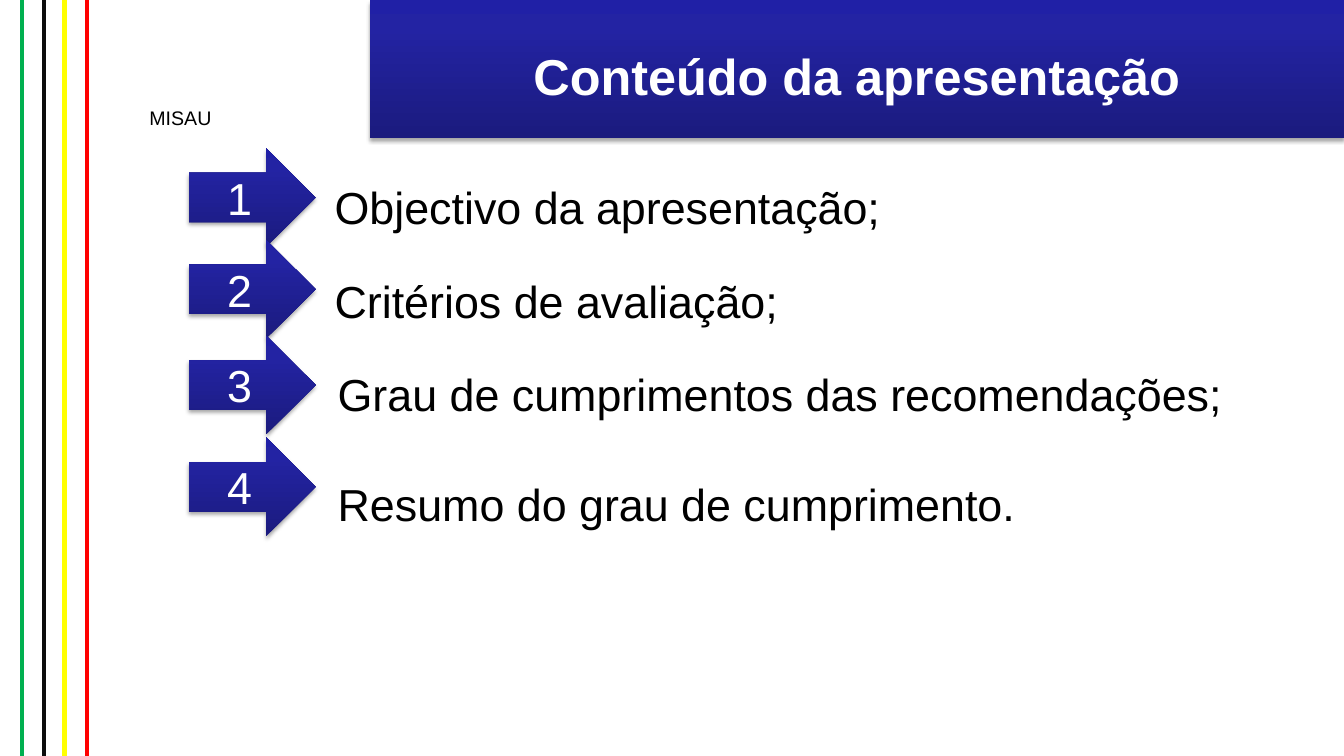
from dataclasses import dataclass

import pptx
import pptx.dml.color
import pptx.enum.shapes
import pptx.enum.text
import pptx.oxml
import pptx.oxml.ns
import pptx.util
from pptx.util import Inches

FONT = "Arial"
WHITE, BLACK = "FFFFFF", "000000"
SHAPES = pptx.enum.shapes.MSO_SHAPE
ALIGN = pptx.enum.text.PP_ALIGN
ANCHOR = pptx.enum.text.MSO_ANCHOR
GRADIENT = ((0, "1B1B7E"), (80, "2323A3"), (100, "2020A6"))
NAMESPACE = pptx.oxml.ns.nsdecls("a")


@dataclass
class Stripe:
    left: float
    color: str


@dataclass
class Topic:
    arrow_top: float
    text: str
    indent: float
    space_after: int


STRIPES = [
    Stripe(0.22, "00B050"),
    Stripe(0.44, "0D0D0D"),
    Stripe(0.64, "FFFF00"),
    Stripe(0.86, "FF0000"),
]
TOPICS = [
    Topic(1.47, "Objectivo da apresentação;", 0.44, 0),
    Topic(2.38, "Critérios de avaliação;", 0.44, 0),
    Topic(3.33, "Grau de cumprimentos das recomendações;", 0.47, 12),
    Topic(4.34, "Resumo do grau de cumprimento.", 0.47, 12),
]


def rgb(color: str) -> pptx.dml.color.RGBColor:
    return pptx.dml.color.RGBColor.from_string(color)


def style_paragraph(para, size: int, color: str, align, bold: bool = False) -> None:
    para.alignment = align
    para.font.name = FONT
    para.font.size = pptx.util.Pt(size)
    para.font.bold = bold
    para.font.color.rgb = rgb(color)


def add_stripe(page, stripe: Stripe) -> None:
    line = page.shapes.add_connector(
        pptx.enum.shapes.MSO_CONNECTOR.STRAIGHT,
        Inches(stripe.left), 0, Inches(stripe.left), Inches(7.5))
    line.line.color.rgb = rgb(stripe.color)
    line.line.width = pptx.util.Pt(3)
    line._element.spPr.append(pptx.oxml.parse_xml(f"<a:effectLst {NAMESPACE}/>"))


def add_blue_shape(page, kind, left: float, top: float, width: float, height: float,
                   text: str, size: int, bold: bool = False):
    shape = page.shapes.add_shape(
        kind, Inches(left), Inches(top), Inches(width), Inches(height))
    shape.line.fill.background()
    # Gradient from bottom to top
    stops = "".join(
        f'<a:gs pos="{place * 1000}"><a:srgbClr val="{color}"/></a:gs>'
        for place, color in GRADIENT)
    properties = shape._element.spPr
    properties.find(pptx.oxml.ns.qn("a:prstGeom")).addnext(pptx.oxml.parse_xml(
        f'<a:gradFill {NAMESPACE} rotWithShape="1"><a:gsLst>{stops}</a:gsLst>'
        '<a:lin ang="16200000" scaled="0"/></a:gradFill>'))
    # Soft shadow below
    properties.append(pptx.oxml.parse_xml(
        f'<a:effectLst {NAMESPACE}><a:outerShdw blurRad="39370" dist="22860" '
        'dir="5400000" rotWithShape="0"><a:srgbClr val="000000">'
        '<a:alpha val="35000"/></a:srgbClr></a:outerShdw></a:effectLst>'))
    frame = shape.text_frame
    frame.vertical_anchor = ANCHOR.MIDDLE
    frame.text = text
    style_paragraph(frame.paragraphs[0], size, WHITE, ALIGN.CENTER, bold)
    return shape


def add_text_box(page, left: float, top: float, width: float, height: float):
    box = page.shapes.add_textbox(
        Inches(left), Inches(top), Inches(width), Inches(height))
    box.text_frame.word_wrap = True
    return box.text_frame


def add_topics(page) -> None:
    frame = add_text_box(page, 2.78, 1.47, 10.39, 4.57)
    for index, topic in enumerate(TOPICS):
        para = frame.paragraphs[0] if index == 0 else frame.add_paragraph()
        para.text = topic.text
        para._p.get_or_add_pPr().set("marL", str(Inches(topic.indent)))
        para.line_spacing = 1.5
        if index:
            para.space_before = pptx.util.Pt(9)
        para.space_after = pptx.util.Pt(topic.space_after)
        style_paragraph(para, 32, BLACK, ALIGN.JUSTIFY)


def main() -> None:
    deck = pptx.Presentation()
    deck.slide_width, deck.slide_height = Inches(13.33), Inches(7.5)
    page = deck.slides.add_slide(deck.slide_layouts[6])

    # Flag stripes and ministry label
    for stripe in STRIPES:
        add_stripe(page, stripe)
    label = add_text_box(page, 1.07, 1, 1.44, 0.34)
    label.text = "MISAU"
    style_paragraph(label.paragraphs[0], 14, BLACK, ALIGN.CENTER)

    # Title banner
    banner = add_blue_shape(page, SHAPES.RECTANGLE, 3.67, 0, 9.66, 1.37,
                            "Conteúdo da apresentação", 36, bold=True)
    banner.text_frame.margin_top = Inches(0.17)

    # Topics and their numbered arrows
    add_topics(page)
    for number, topic in enumerate(TOPICS, start=1):
        add_blue_shape(page, SHAPES.RIGHT_ARROW, 1.87, topic.arrow_top, 1.26, 0.98,
                       str(number), 32)

    deck.save("out.pptx")


if __name__ == "__main__":
    main()
